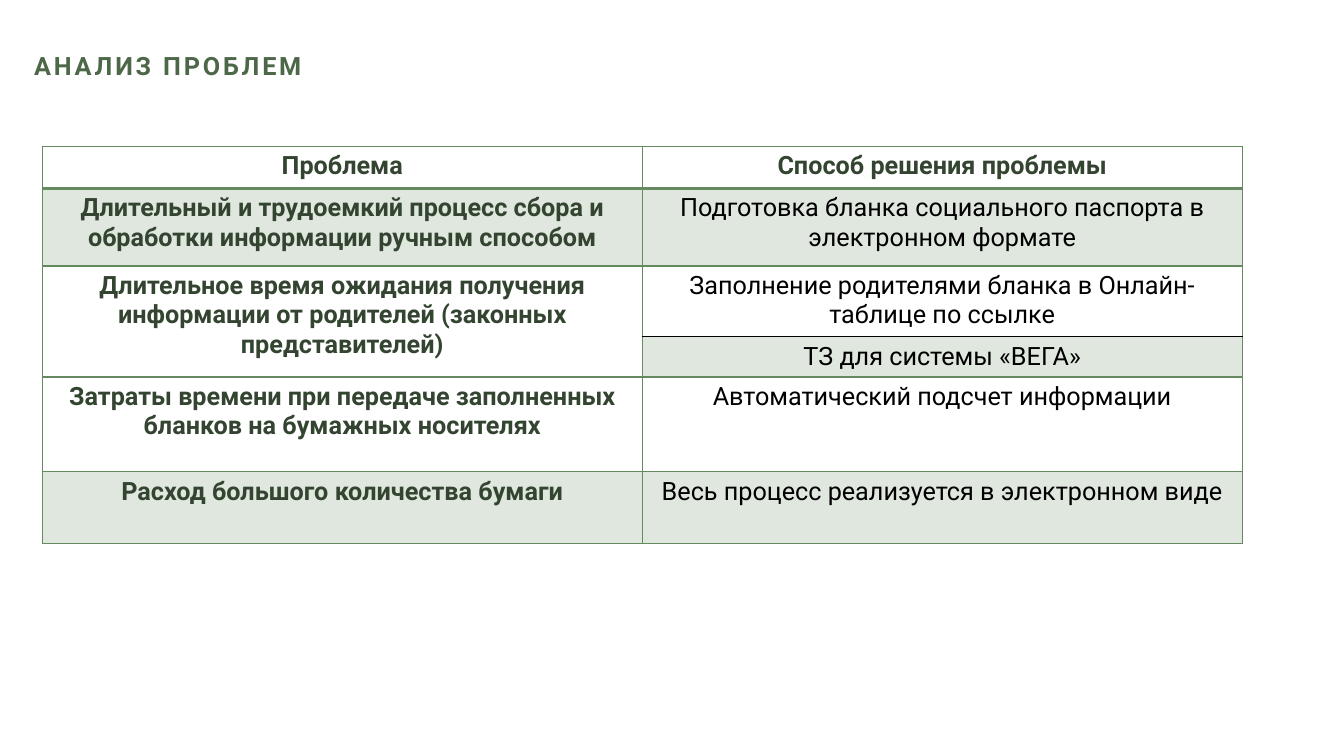
from lxml import etree
from pptx import Presentation
from pptx.dml.color import RGBColor
from pptx.enum.text import MSO_ANCHOR, PP_ALIGN
from pptx.oxml.ns import qn
from pptx.util import Inches, Pt

COLORS = {"title": "4D6848", "problem": "334530", "solution": "000000",
          "green": "668A60", "black": "000000"}
FONT = {"name": "Roboto", "size": Pt(18)}

COL_WIDTH = 5.95
ROW_HEIGHTS = [0.42, 0.77, 0.62, 0.39, 0.94, 0.71]
SHADED = {(1, 0), (1, 1), (3, 1), (5, 0), (5, 1)}
ROWS = [
    ("Проблема", "Способ решения проблемы"),
    ("Длительный и трудоемкий процесс сбора и обработки информации ручным способом",
     "Подготовка бланка социального паспорта в электронном формате"),
    ("Длительное время ожидания получения информации от родителей (законных представителей)",
     "Заполнение родителями бланка в Онлайн-таблице по ссылке"),
    ("", "ТЗ для системы «ВЕГА»"),
    ("Затраты времени при передаче заполненных бланков на бумажных носителях",
     "Автоматический подсчет информации"),
    ("Расход большого количества бумаги",
     "Весь процесс реализуется в электронном виде"),
]
# Borders that differ from the thin green grid: (row, column, side)
SPECIAL_BORDERS = {
    **{(0, c, "B"): ("green", 2) for c in (0, 1)},
    **{(1, c, "T"): ("green", 2) for c in (0, 1)},
    (2, 1, "B"): ("black", 1),
    (3, 1, "T"): ("black", 1),
}


def write(p, text, color, bold):
    r = p.add_run()
    r.text = text
    for name, value in {**FONT, "bold": bold}.items():
        setattr(r.font, name, value)
    r.font.color.rgb = RGBColor.from_string(COLORS[color])
    return r


def add_title(s, x, y, w, h):
    tf = s.shapes.add_textbox(Inches(x), Inches(y), Inches(w), Inches(h)).text_frame
    tf.word_wrap = True
    tf.vertical_anchor = MSO_ANCHOR.MIDDLE
    p = tf.paragraphs[0]
    p.line_spacing = 0.9
    r = write(p, "АНАЛИЗ ПРОБЛЕМ", "title", True)
    r.font._element.set("spc", "200")


def shade(cell):
    cell.fill.solid()
    cell.fill.fore_color.rgb = RGBColor.from_string(COLORS["green"])
    color = cell._tc.tcPr.find(qn("a:solidFill"))[0]
    etree.SubElement(color, qn("a:alpha"), val="20000")


def add_borders(cell, row, col):
    tc_pr = cell._tc.get_or_add_tcPr()
    for i, side in enumerate("LRTB"):
        color, width = SPECIAL_BORDERS.get((row, col, side), ("green", 1))
        ln = etree.Element(qn(f"a:ln{side}"), w=str(Pt(width)))
        fill = etree.SubElement(ln, qn("a:solidFill"))
        etree.SubElement(fill, qn("a:srgbClr"), val=COLORS[color])
        tc_pr.insert(i, ln)


def add_problem_table(s, x, y):
    table = s.shapes.add_table(len(ROWS), 2, Inches(x), Inches(y), Inches(2 * COL_WIDTH),
                               Inches(sum(ROW_HEIGHTS))).table
    table.first_row = table.horz_banding = False
    for column in table.columns:
        column.width = Inches(COL_WIDTH)

    for row, texts in enumerate(ROWS):
        table.rows[row].height = Inches(ROW_HEIGHTS[row])
        for col, text in enumerate(texts):
            cell = table.cell(row, col)
            if (row, col) in SHADED:
                shade(cell)
            else:
                cell.fill.background()
            add_borders(cell, row, col)
            if text:
                p = cell.text_frame.paragraphs[0]
                p.alignment = PP_ALIGN.CENTER
                strong = row == 0 or col == 0
                write(p, text, "problem" if strong else "solution", strong)

    # One problem with two solutions
    table.cell(2, 0).merge(table.cell(3, 0))


def main():
    prs = Presentation()
    prs.slide_width, prs.slide_height = Inches(13.33), Inches(7.5)
    s = prs.slides.add_slide(prs.slide_layouts[6])
    add_title(s, 0.24, 0.13, 10.81, 1.07)
    add_problem_table(s, 0.42, 1.45)
    prs.save("out.pptx")


if __name__ == "__main__":
    main()
